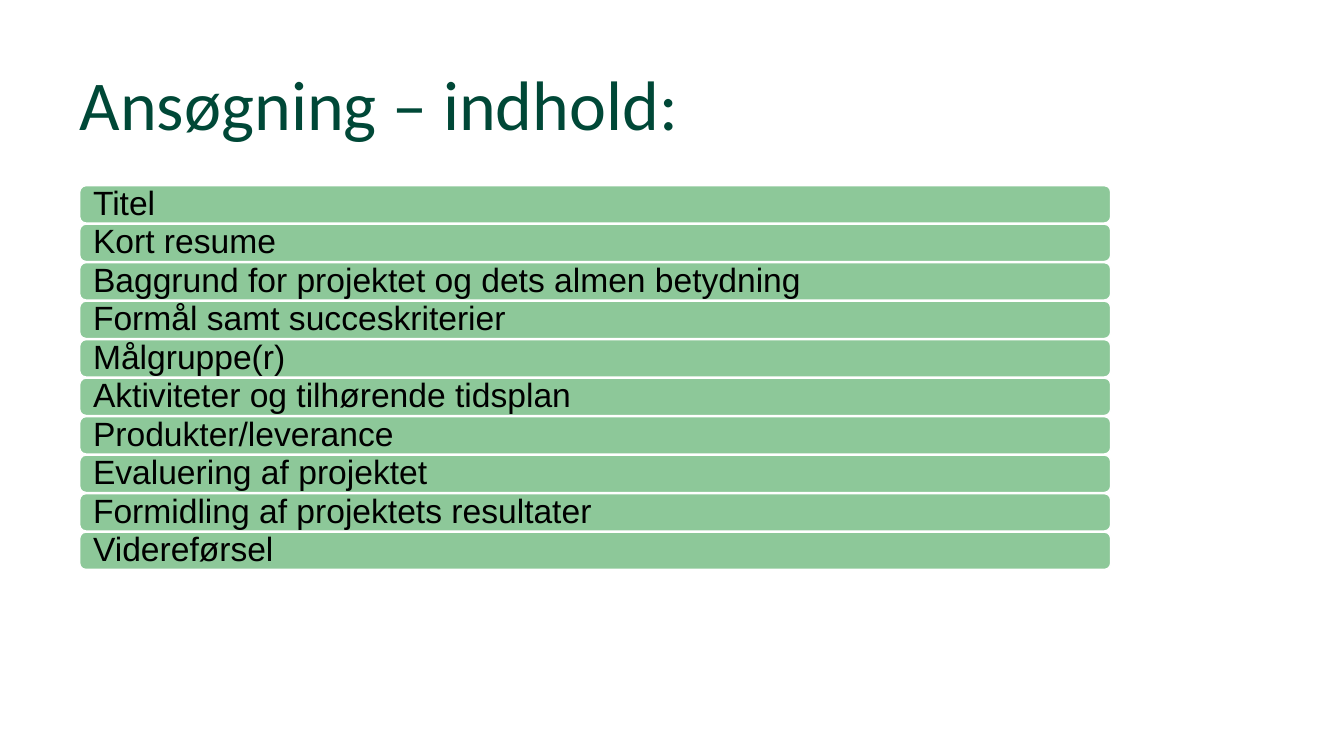
from pptx import Presentation
from pptx import util as u
from pptx.dml.color import RGBColor
from pptx.enum import shapes, text

ITEMS = [
    "Titel",
    "Kort resume",
    "Baggrund for projektet og dets almen betydning",
    "Formål samt succeskriterier",
    "Målgruppe(r)",
    "Aktiviteter og tilhørende tidsplan",
    "Produkter/leverance",
    "Evaluering af projektet",
    "Formidling af projektets resultater",
    "Videreførsel",
]
LEFT, TOP, STEP = 2.01, 4.68, 0.97


def color(code):
    return RGBColor.from_string(code)


def assign(item, values):
    for key, value in values.items():
        setattr(item, key, value)


class Page:
    green, dark, black, white = "8DC899", "004837", "000000", "FFFFFF"

    def __init__(self, deck):
        self.slide = deck.slides.add_slide(deck.slide_layouts[5])

    def label(self, shape, words, ink, font, line, frame):
        """Fill a shape with one left-aligned paragraph."""
        box = shape.text_frame
        box.text = words
        base = dict(word_wrap=True, auto_size=text.MSO_AUTO_SIZE.NONE,
                    margin_left=0, margin_right=0,
                    margin_top=0, margin_bottom=0)
        assign(box, {**base, **frame})
        para = box.paragraphs[0]
        assign(para, dict(alignment=text.PP_ALIGN.LEFT, line_spacing=line))
        assign(para.font, font)
        para.font.color.rgb = color(ink)

    def title(self, words, left, top, width, height):
        shape = self.slide.shapes.title
        assign(shape, dict(left=u.Cm(left), top=u.Cm(top),
                           width=u.Cm(width), height=u.Cm(height)))
        self.label(shape, words, self.dark,
                   dict(name="Calibri", size=u.Pt(50)), 0.83,
                   dict(vertical_anchor=text.MSO_ANCHOR.TOP))

    def bar(self, words, left, top, width, height):
        shape = self.slide.shapes.add_shape(
            shapes.MSO_SHAPE.ROUNDED_RECTANGLE,
            *map(u.Cm, (left, top, width, height)))
        shape.shadow.inherit = False
        shape.fill.solid()
        shape.fill.fore_color.rgb = color(self.green)
        shape.line.color.rgb = color(self.white)
        shape.line.width = u.Pt(1)
        self.label(shape, words, self.black,
                   dict(name="Arial", size=u.Pt(24)), 0.9,
                   dict(vertical_anchor=text.MSO_ANCHOR.MIDDLE,
                        margin_left=u.Cm(0.29), margin_right=u.Cm(0.29)))


def main():
    deck = Presentation()
    assign(deck, dict(slide_width=u.Cm(33.87), slide_height=u.Cm(19.05)))
    page = Page(deck)
    page.title("Ansøgning – indhold:", LEFT, 1.88, 17.8, 3.66)
    for row, words in enumerate(ITEMS):
        page.bar(words, LEFT, TOP + row * STEP, 25.98, 0.94)
    deck.save("out.pptx")


if __name__ == "__main__":
    main()
